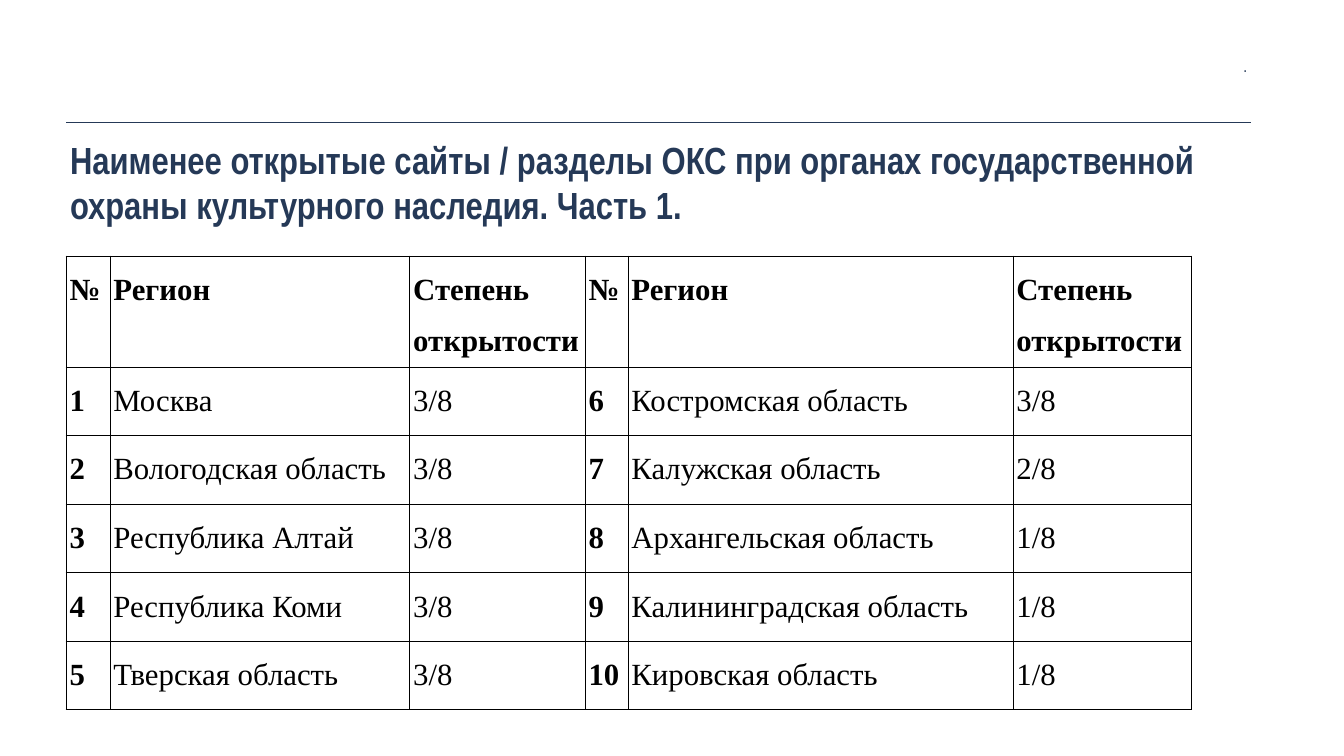
from dataclasses import dataclass

from lxml.etree import SubElement
from pptx import Presentation
from pptx.dml.color import RGBColor
from pptx.enum.shapes import MSO_CONNECTOR
from pptx.enum.text import MSO_ANCHOR as ANCHOR, MSO_AUTO_SIZE as AUTO, PP_ALIGN as ALIGN
from pptx.oxml.ns import qn
from pptx.util import Emu, Pt

PX = 9144  # 100 px to the inch
COLORS = {"navy": "253957", "black": "000000"}
HEADINGS = ("№", "Регион", "Степень открытости")
COLUMNS = (87, 595, 348, 85, 764, 354)
ROW_HEIGHT = 136
LEFT, RIGHT = 131, 2483


@dataclass(frozen=True)
class Region:
    name: str
    openness: str


REGIONS = [
    Region("Москва", "3/8"),
    Region("Вологодская область", "3/8"),
    Region("Республика Алтай", "3/8"),
    Region("Республика Коми", "3/8"),
    Region("Тверская область", "3/8"),
    Region("Костромская область", "3/8"),
    Region("Калужская область", "2/8"),
    Region("Архангельская область", "1/8"),
    Region("Калининградская область", "1/8"),
    Region("Кировская область", "1/8"),
]


def px(n: int) -> Emu:
    return Emu(n * PX)


def color(name: str) -> RGBColor:
    return RGBColor.from_string(COLORS[name])


def write(tf, text: str, *, size: int, font: str = "Arial Narrow", fill: str = "navy",
          bold: bool = False, align=ALIGN.LEFT, after: int = 0, spacing: float = 1.0) -> None:
    p = tf.paragraphs[0]
    p.alignment, p.line_spacing = align, spacing
    p.space_before, p.space_after = Pt(0), Pt(after)
    r = p.add_run()
    r.text = text
    r.font.size, r.font.name, r.font.bold = Pt(size), font, bold
    r.font.color.rgb = color(fill)


def place(sp, x: int, y: int, w: int, h: int, anchor, auto=AUTO.NONE):
    """Set a text shape's box and return its text frame."""
    sp.left, sp.top, sp.width, sp.height = map(px, (x, y, w, h))
    tf = sp.text_frame
    tf.word_wrap, tf.auto_size, tf.vertical_anchor = True, auto, anchor
    tf.margin_left = tf.margin_right = tf.margin_top = tf.margin_bottom = px(8)
    return tf


def add_rule(slide, y: int) -> None:
    line = slide.shapes.add_connector(MSO_CONNECTOR.STRAIGHT, px(LEFT), px(y), px(RIGHT), px(y))
    line.line.color.rgb = color("navy")
    line.line.width = Pt(1)
    SubElement(line._element.spPr, qn("a:effectLst"))


def format_cell(cell, text: str, bold: bool) -> None:
    cell.margin_left = cell.margin_right = px(7)
    cell.margin_top = cell.margin_bottom = 0
    cell.vertical_anchor = ANCHOR.TOP
    write(cell.text_frame, text, size=44, font="Times New Roman", fill="black",
          bold=bold, align=ALIGN.JUSTIFY, after=8, spacing=1.5)
    tc_pr = cell._tc.get_or_add_tcPr()
    for side in ("lnL", "lnR", "lnT", "lnB"):
        ln = SubElement(tc_pr, qn(f"a:{side}"), w=str(Pt(1)))
        SubElement(SubElement(ln, qn("a:solidFill")), qn("a:srgbClr"), val=COLORS["black"])
    cell.fill.background()


def add_region_table(slide, regions: list[Region], y: int) -> None:
    half = len(regions) // 2
    rows = [HEADINGS * 2]
    for i in range(half):
        rows.append([text for n in (i, i + half)
                     for text in (str(n + 1), regions[n].name, regions[n].openness)])
    table = slide.shapes.add_table(len(rows), len(COLUMNS), px(LEFT), px(y),
                                   px(sum(COLUMNS)), px(ROW_HEIGHT * len(rows))).table
    table.first_row = table.horz_banding = False
    for column, width in zip(table.columns, COLUMNS):
        column.width = px(width)
    for i, row in enumerate(rows):
        table.rows[i].height = px(ROW_HEIGHT)
        for j, text in enumerate(row):
            format_cell(table.cell(i, j), text, bold=i == 0 or j % 3 == 0)


def main() -> None:
    prs = Presentation()
    prs.slide_width, prs.slide_height = px(2667), px(1500)
    slide = prs.slides.add_slide(prs.slide_layouts[5])

    # Header rule and title
    add_rule(slide, 242)
    tf = place(slide.shapes.title, LEFT, 262, 2478, 197, ANCHOR.BOTTOM)
    write(tf, "Наименее открытые сайты / разделы ОКС при органах государственной "
              "охраны культурного наследия. Часть 1.", size=54, bold=True, after=24)

    # Header mark
    mark = slide.shapes.add_textbox(0, 0, 0, 0)
    tf = place(mark, 1240, 103, 1243, 56, ANCHOR.MIDDLE, AUTO.SHAPE_TO_FIT_TEXT)
    write(tf, ".", size=24, align=ALIGN.RIGHT)

    # Regions, numbered down the left half and then the right
    add_region_table(slide, REGIONS, 508)

    prs.save("out.pptx")


if __name__ == "__main__":
    main()
